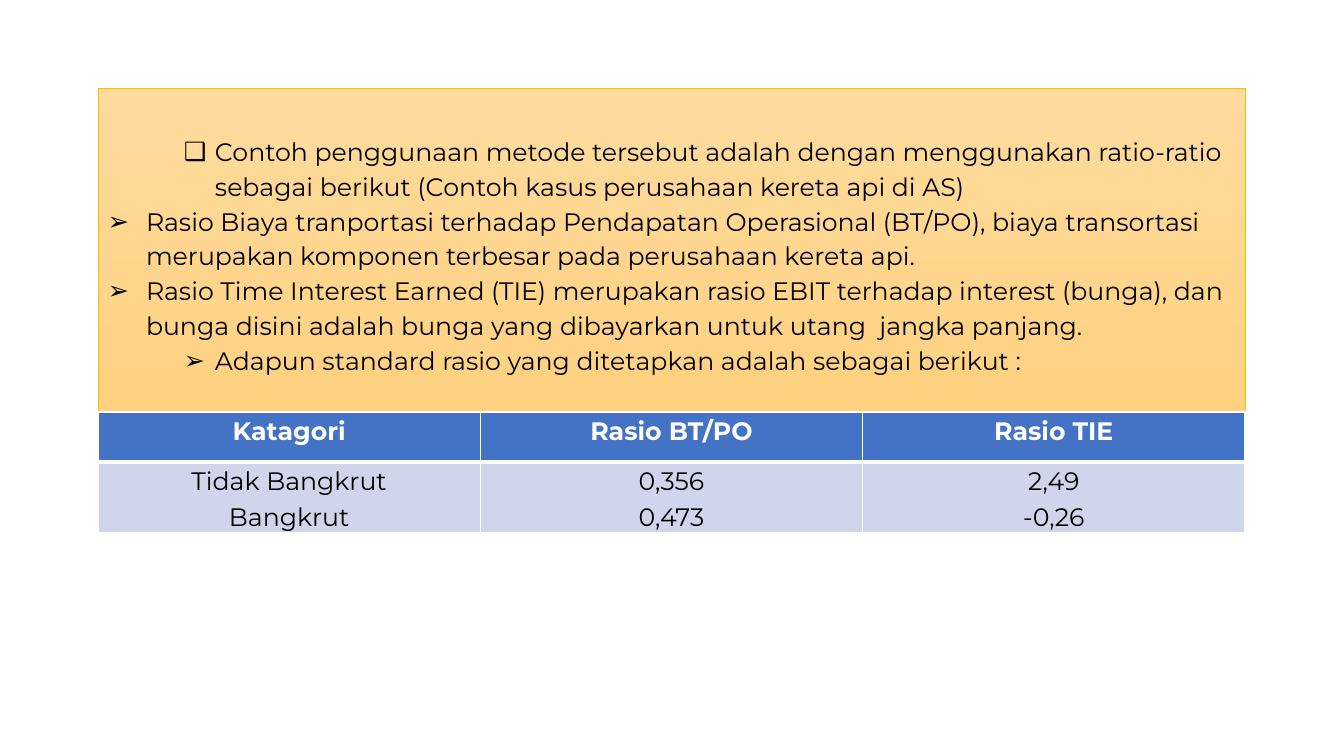
from lxml.etree import SubElement
from pptx import Presentation
from pptx.dml.color import RGBColor
from pptx.enum.text import MSO_ANCHOR as Anchor, MSO_AUTO_SIZE as AutoSize, PP_ALIGN as Align
from pptx.oxml.ns import qn
from pptx.util import Pt

EMU_PER_PX = 914400 / 100.8
FONT = "Montserrat"
COLORS = {
    "panel_top": "FFDB9E", "panel_bottom": "FFD07C", "panel_line": "FFC000",
    "header": "4472C4", "body": "CFD5EA", "white": "FFFFFF", "text": "000000",
}
OUTER = {"left": 38, "hanging": 38}
INNER = {"left": 107, "hanging": 31}
POINTS = [
    ("❑", INNER, "Contoh penggunaan metode tersebut adalah dengan menggunakan ratio-ratio "
                 "sebagai berikut (Contoh kasus perusahaan kereta api di AS)"),
    ("➢", OUTER, "Rasio Biaya tranportasi terhadap Pendapatan Operasional (BT/PO), "
                 "biaya transortasi merupakan komponen terbesar pada perusahaan kereta api."),
    ("➢", OUTER, "Rasio Time Interest Earned (TIE) merupakan rasio EBIT terhadap interest "
                 "(bunga), dan bunga disini adalah bunga yang dibayarkan untuk utang  jangka panjang."),
    ("➢", INNER, "Adapun standard rasio yang ditetapkan adalah sebagai berikut :"),
]
RATIO_COLUMNS = [
    ("Katagori", ["Tidak Bangkrut", "Bangkrut"]),
    ("Rasio BT/PO", ["0,356", "0,473"]),
    ("Rasio TIE", ["2,49", "-0,26"]),
]


def px(length):
    return round(length * EMU_PER_PX)


def color(name):
    return RGBColor.from_string(COLORS[name])


def write_paragraph(frame, index, text, align=Align.LEFT, ink="text", bold=False):
    paragraph = frame.paragraphs[0] if index == 0 else frame.add_paragraph()
    paragraph.alignment = align
    paragraph.line_spacing = 1.15
    paragraph.space_before = paragraph.space_after = Pt(0)
    run = paragraph.add_run()
    run.text = text
    run.font.name, run.font.size, run.font.bold = FONT, Pt(18), bold
    run.font.color.rgb = color(ink)
    return paragraph


def set_bullet(paragraph, char, left, hanging):
    properties = paragraph._p.get_or_add_pPr()
    properties.set("marL", str(px(left)))
    properties.set("indent", str(-px(hanging)))
    SubElement(properties, qn("a:buFont"), typeface=FONT)
    SubElement(properties, qn("a:buChar"), char=char)


def set_borders(cell, bottom):
    properties = cell._tc.get_or_add_tcPr()
    for side, width in (("L", 1), ("R", 1), ("T", 1), ("B", bottom)):
        line = SubElement(properties, qn(f"a:ln{side}"), w=str(Pt(width)))
        fill = SubElement(line, qn("a:solidFill"))
        SubElement(fill, qn("a:srgbClr"), val=COLORS["white"])


def fill_cell(cell, lines, fill, bottom_border, **text_format):
    cell.margin_left = cell.margin_right = px(7)
    cell.margin_top = cell.margin_bottom = 0
    set_borders(cell, bottom_border)
    cell.fill.solid()
    cell.fill.fore_color.rgb = color(fill)
    for index, line in enumerate(lines):
        write_paragraph(cell.text_frame, index, line, align=Align.CENTER, **text_format)


def add_explanation_panel(slide, left, top, width, height):
    panel = slide.placeholders[1]
    panel.left, panel.top, panel.width, panel.height = map(px, (left, top, width, height))

    # Gradient from top to bottom
    panel.fill.gradient()
    panel.fill.gradient_angle = 270
    for stop, name in zip(panel.fill.gradient_stops, ("panel_top", "panel_bottom")):
        stop.color.rgb = color(name)
    panel.line.color.rgb = color("panel_line")
    panel.line.width = Pt(0.5)

    # Bulleted list, kept clear of the table by the bottom margin
    frame = panel.text_frame
    frame.word_wrap = True
    frame.auto_size = AutoSize.NONE
    frame.vertical_anchor = Anchor.MIDDLE
    frame.margin_left = frame.margin_right = px(10)
    frame.margin_top, frame.margin_bottom = px(5), px(40)
    for index, (char, indent, text) in enumerate(POINTS):
        set_bullet(write_paragraph(frame, index, text), char, **indent)


def add_ratio_table(slide, left, top, width, row_heights):
    box = map(px, (left, top, width, sum(row_heights)))
    table = slide.shapes.add_table(len(row_heights), len(RATIO_COLUMNS), *box).table
    for row, height in zip(table.rows, row_heights):
        row.height = px(height)
    for index, (heading, values) in enumerate(RATIO_COLUMNS):
        table.columns[index].width = px(width / len(RATIO_COLUMNS))
        fill_cell(table.cell(0, index), [heading], "header", 3, ink="white", bold=True)
        fill_cell(table.cell(1, index), values, "body", 1)


def main():
    presentation = Presentation()
    presentation.slide_width, presentation.slide_height = px(1344), px(756)
    slide = presentation.slides.add_slide(presentation.slide_layouts[1])
    title = slide.shapes.title.element
    title.getparent().remove(title)

    add_explanation_panel(slide, 98, 88, 1147, 366)
    add_ratio_table(slide, 98, 412, 1147, (50, 71))
    presentation.save("out.pptx")


if __name__ == "__main__":
    main()
